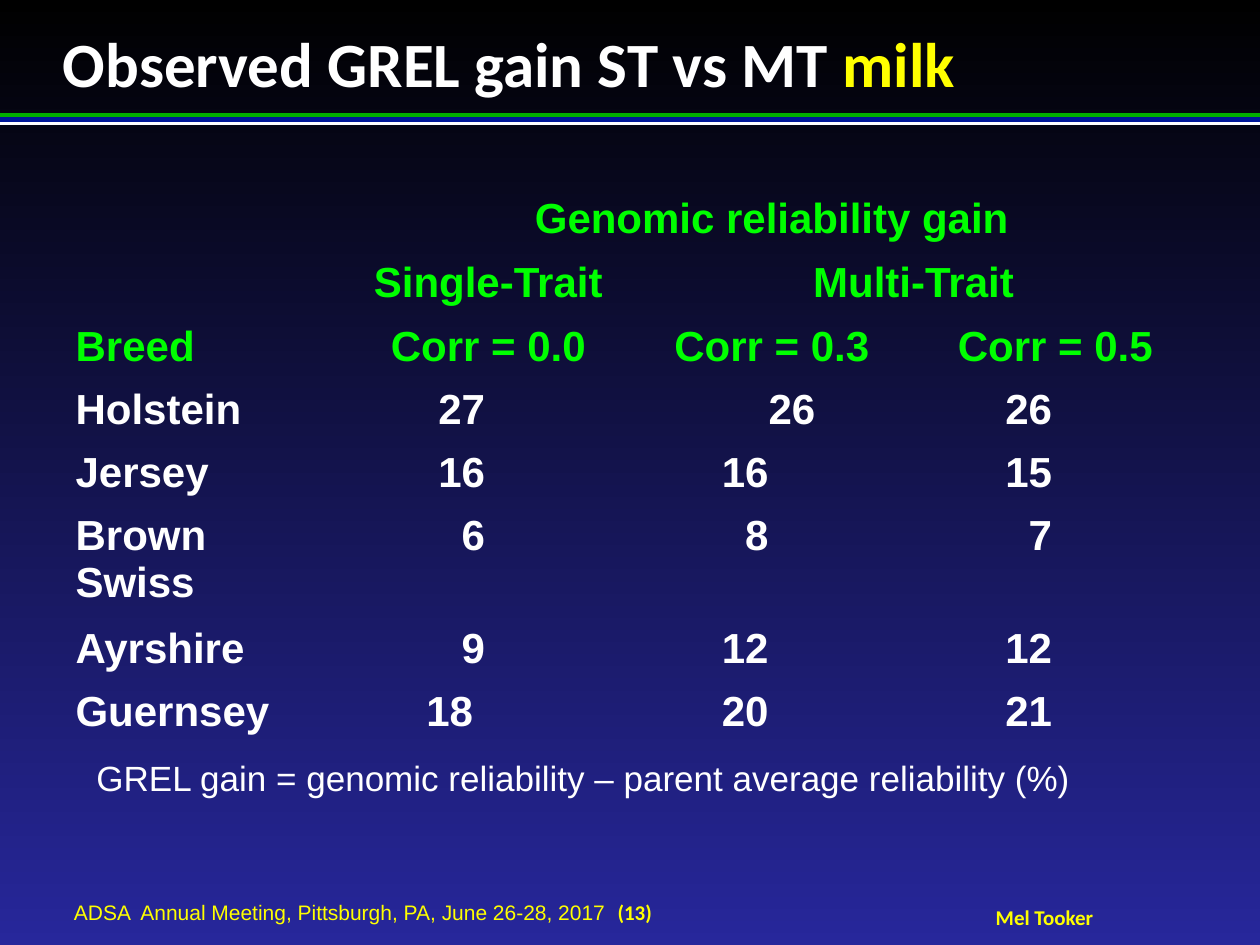
"""Build the slide comparing single-trait and multi-trait gains for milk."""
from lxml import etree
from pptx import Presentation
from pptx import util as u
from pptx.dml.color import RGBColor
from pptx.enum import shapes, text
from pptx.oxml import ns

PX = 914400 // 126
COLORS = {"white": "FFFFFF", "yellow": "FFFF00", "lime": "00FF00", "green": "01AF00",
          "blue": "001799", "black": "000000", "indigo": "27279B"}
NO_STYLE = "{2D5ABB26-0587-4C30-8999-92F81FD0307C}"

TITLE = [("Observed GREL gain ST vs MT ", {}), ("milk", {"color": "yellow"})]
NOTE = [("GREL gain = genomic reliability – parent average reliability (%)", {})]
MEETING = [("ADSA  Annual Meeting, Pittsburgh, PA, June 26-28, 2017  ", {}),
           ("(13)", {"font": "Calibri", "bold": True})]
AUTHOR = [("Mel Tooker", {})]
STRIPES = [("green", 113, 4), ("white", 121, 4), ("blue", 117, 5)]
HEADERS = [
    ["", "Genomic reliability gain", "", ""],
    ["", "Single-Trait", "Multi-Trait", ""],
    ["Breed", "Corr = 0.0", "Corr = 0.3", "Corr = 0.5"],
]
GAINS = [
    ["Holstein", 27, 26, 26],
    ["Jersey", 16, 16, 15],
    ["Brown Swiss", 6, 8, 7],
    ["Ayrshire", 9, 12, 12],
    ["Guernsey", 18, 20, 21],
]
MERGES = [((0, 1), (0, 3)), ((1, 2), (1, 3))]
ROW_HEIGHTS = [64, 64, 59, 59, 59, 106, 59, 59]
TABS = {("Holstein", 2): (126, "l"), ("Guernsey", 1): (114, "dec")}


def px(*lengths):
    return [u.Emu(length * PX) for length in lengths]


def rgb(name):
    return RGBColor.from_string(COLORS[name])


def add_span(para, words, font="Arial", size=24, color="white", bold=False):
    span = para.add_run()
    span.text = words
    span.font.name, span.font.size, span.font.bold = font, u.Pt(size), bold
    span.font.color.rgb = rgb(color)


def add_text(page, spans, place, inset=True, wrap=True, anchor="TOP", align="LEFT", **style):
    box = page.shapes.add_textbox(*px(*place))
    frame = box.text_frame
    frame.word_wrap = wrap
    frame.vertical_anchor = text.MSO_ANCHOR[anchor]
    if not inset:
        frame.margin_left = frame.margin_right = frame.margin_top = frame.margin_bottom = 0
    para = frame.paragraphs[0]
    para.alignment = text.PP_ALIGN[align]
    for words, changes in spans:
        add_span(para, words, **{**style, **changes})


def add_tab(para, position, kind):
    tabs = etree.SubElement(para._p.get_or_add_pPr(), ns.qn("a:tabLst"))
    etree.SubElement(tabs, ns.qn("a:tab"), pos=str(position * PX), algn=kind)


def add_gain_table(page):
    rows = HEADERS + GAINS
    table = page.shapes.add_table(len(rows), 4, *px(63, 189, 1134, sum(ROW_HEIGHTS))).table
    table.first_row = table.horz_banding = False
    table._tbl.tblPr.find(ns.qn("a:tableStyleId")).text = NO_STYLE
    for first, last in MERGES:
        table.cell(*first).merge(table.cell(*last))
    for column in table.columns:
        column.width = u.Inches(2.25)
    for r, values in enumerate(rows):
        table.rows[r].height = u.Emu(ROW_HEIGHTS[r] * PX)
        for c, value in enumerate(values):
            cell = table.cell(r, c)
            cell.fill.background()
            if value == "":
                continue
            para = cell.text_frame.paragraphs[0]
            if isinstance(value, int):
                add_tab(para, *TABS.get((values[0], c), (126, "dec")))
                value = f"\t{value}"
            elif c:
                para.alignment = text.PP_ALIGN.CENTER
            add_span(para, value, color="lime" if r < len(HEADERS) else "white", bold=True)


def main():
    deck = Presentation()
    deck.slide_width, deck.slide_height = px(1260, 945)
    page = deck.slides.add_slide(deck.slide_layouts[6])
    fill = page.background.fill
    fill.gradient()
    fill.gradient_angle = 270
    for stop, color, position in zip(fill.gradient_stops, ("black", "indigo"), (0, 1)):
        stop.color.rgb, stop.position = rgb(color), position

    add_text(page, AUTHOR, (989, 905, 111, 25), inset=False, wrap=False, anchor="MIDDLE",
             align="CENTER", font="Calibri", size=12, color="yellow", bold=True)
    for color, top, height in STRIPES:
        stripe = page.shapes.add_shape(shapes.MSO_SHAPE.RECTANGLE, *px(0, top, 1260, height))
        stripe.shadow.inherit = False
        stripe.fill.solid()
        stripe.fill.fore_color.rgb = rgb(color)
        stripe.line.fill.background()
    add_text(page, MEETING, (74, 900, 857, 25), inset=False, anchor="MIDDLE",
             size=12, color="yellow")
    add_text(page, TITLE, (63, 25, 1134, 76), inset=False, font="Calibri", size=36, bold=True)
    add_gain_table(page)
    add_text(page, NOTE, (84, 750, 1007, 81), wrap=False, size=20)
    deck.save("out.pptx")


if __name__ == "__main__":
    main()
